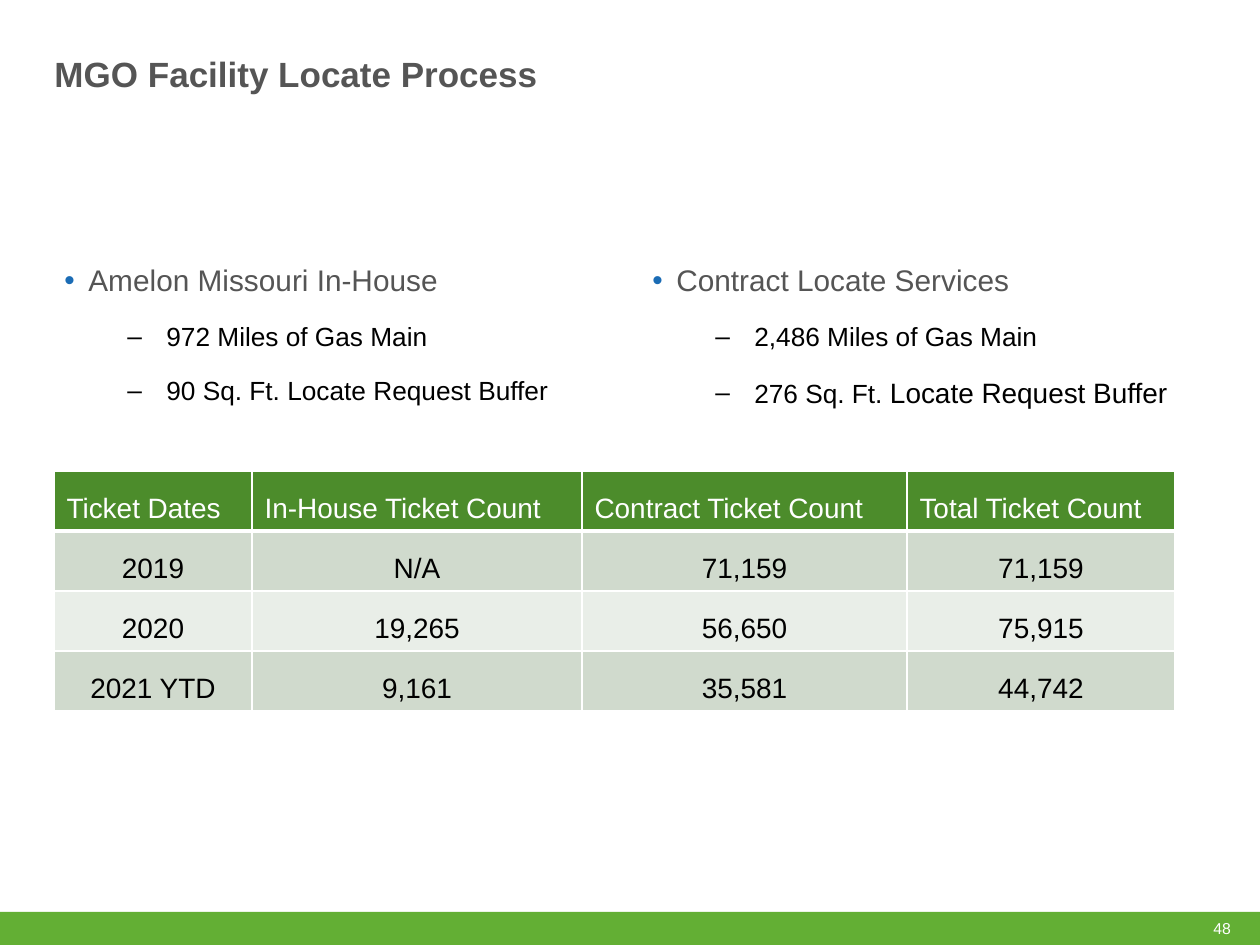
from lxml import etree
from pptx import Presentation
from pptx.dml.color import RGBColor
from pptx.enum.shapes import MSO_SHAPE
from pptx.enum.text import MSO_ANCHOR, PP_ALIGN
from pptx.oxml.ns import qn
from pptx.util import Emu, Pt

PX = 914400 // 126
RECTANGLE = MSO_SHAPE.RECTANGLE
TOP, MIDDLE, BOTTOM = MSO_ANCHOR.TOP, MSO_ANCHOR.MIDDLE, MSO_ANCHOR.BOTTOM
LEFT, CENTER = PP_ALIGN.LEFT, PP_ALIGN.CENTER
FONT = "Arial"
GRAY, BLACK, WHITE, BLUE = "555555", "000000", "FFFFFF", "1B6CB5"
BAR_GREEN, HEADER_GREEN = "63AF34", "4C8C2B"
BANDS = ["D0DACD", "E9EEE8"]

TITLE = "MGO Facility Locate Process"
PAGE_NUMBER = "48"
COLUMNS = [
    ((52, 238, 588, 184), "Amelon Missouri In-House",
     [[("972 Miles of Gas Main", 15)], [("90 Sq. Ft. Locate Request Buffer", 15)]]),
    ((640, 238, 567, 184), "Contract Locate Services",
     [[("2,486 Miles of Gas Main", 15)], [("276 Sq. Ft. ", 15), ("Locate Request Buffer", 16)]]),
]
TICKETS = [
    ["Ticket Dates", "In-House Ticket Count", "Contract Ticket Count", "Total Ticket Count"],
    ["2019", "N/A", "71,159", "71,159"],
    ["2020", "19,265", "56,650", "75,915"],
    ["2021 YTD", "9,161", "35,581", "44,742"],
]
COLUMN_WIDTHS = [198, 330, 325, 268]
ROW_HEIGHT = 60


def px(value):
    return Emu(value * PX)


def color(value):
    return RGBColor.from_string(value)


def add_run(paragraph, text, size, fill, bold=False):
    run = paragraph.add_run()
    run.text = text
    run.font.name, run.font.size, run.font.bold = FONT, Pt(size), bold
    run.font.color.rgb = color(fill)


def add_box(slide, box, anchor=TOP):
    frame = slide.shapes.add_textbox(*map(px, box)).text_frame
    frame.word_wrap = True
    frame.vertical_anchor = anchor
    return frame


def set_bullet(paragraph, mark, fill, margin, indent):
    properties = paragraph._p.get_or_add_pPr()
    properties.set("marL", str(px(margin)))
    properties.set("indent", str(px(-indent)))
    bullet_color = etree.SubElement(properties, qn("a:buClr"))
    etree.SubElement(bullet_color, qn("a:srgbClr"), val=fill)
    etree.SubElement(properties, qn("a:buFont"), typeface=FONT)
    etree.SubElement(properties, qn("a:buChar"), char=mark)
    paragraph.line_spacing = 1.5


def add_column(slide, box, heading, items):
    frame = add_box(slide, box)
    paragraph = frame.paragraphs[0]
    set_bullet(paragraph, "•", BLUE, 24, 24)
    add_run(paragraph, heading, 17, GRAY)
    for runs in items:
        paragraph = frame.add_paragraph()
        set_bullet(paragraph, "–", BLACK, 102, 39)
        paragraph.space_before = Pt(4)
        for text, size in runs:
            add_run(paragraph, text, size, BLACK)


def set_borders(cell, bottom_width):
    properties = cell._tc.get_or_add_tcPr()
    widths = {"a:lnL": 1, "a:lnR": 1, "a:lnT": 1, "a:lnB": bottom_width}
    for position, (side, width) in enumerate(widths.items()):
        line = etree.Element(qn(side), w=str(Pt(width)))
        fill = etree.SubElement(line, qn("a:solidFill"))
        etree.SubElement(fill, qn("a:srgbClr"), val=WHITE)
        properties.insert(position, line)


def add_ticket_table(slide):
    box = (54, 471, sum(COLUMN_WIDTHS), ROW_HEIGHT * len(TICKETS))
    table = slide.shapes.add_table(len(TICKETS), len(COLUMN_WIDTHS), *map(px, box)).table
    for column, width in zip(table.columns, COLUMN_WIDTHS):
        column.width = px(width)
    for row, values in enumerate(TICKETS):
        header = row == 0
        table.rows[row].height = px(ROW_HEIGHT)
        for column, text in enumerate(values):
            cell = table.cell(row, column)
            cell.vertical_anchor = BOTTOM
            cell.fill.solid()
            cell.fill.fore_color.rgb = color(HEADER_GREEN if header else BANDS[(row - 1) % 2])
            set_borders(cell, 3 if header else 1)
            paragraph = cell.text_frame.paragraphs[0]
            paragraph.alignment = LEFT if header else CENTER
            add_run(paragraph, text, 16, WHITE if header else BLACK)


def main():
    """Build the facility locate slide."""
    presentation = Presentation()
    presentation.slide_width, presentation.slide_height = px(1260), px(945)
    slide = presentation.slides.add_slide(presentation.slide_layouts[6])
    bar = slide.shapes.add_shape(RECTANGLE, *map(px, (0, 912, 1260, 35)))
    bar.shadow.inherit = False
    bar.fill.solid()
    bar.fill.fore_color.rgb = color(BAR_GREEN)
    bar.line.fill.background()
    number = add_box(slide, (1201, 912, 60, 33), MIDDLE)
    add_run(number.paragraphs[0], PAGE_NUMBER, 9, WHITE)
    title = add_box(slide, (42, 36, 588, 74), MIDDLE)
    add_run(title.paragraphs[0], TITLE, 20, GRAY, True)
    for column in COLUMNS:
        add_column(slide, *column)
    add_ticket_table(slide)
    presentation.save("out.pptx")


if __name__ == "__main__":
    main()
